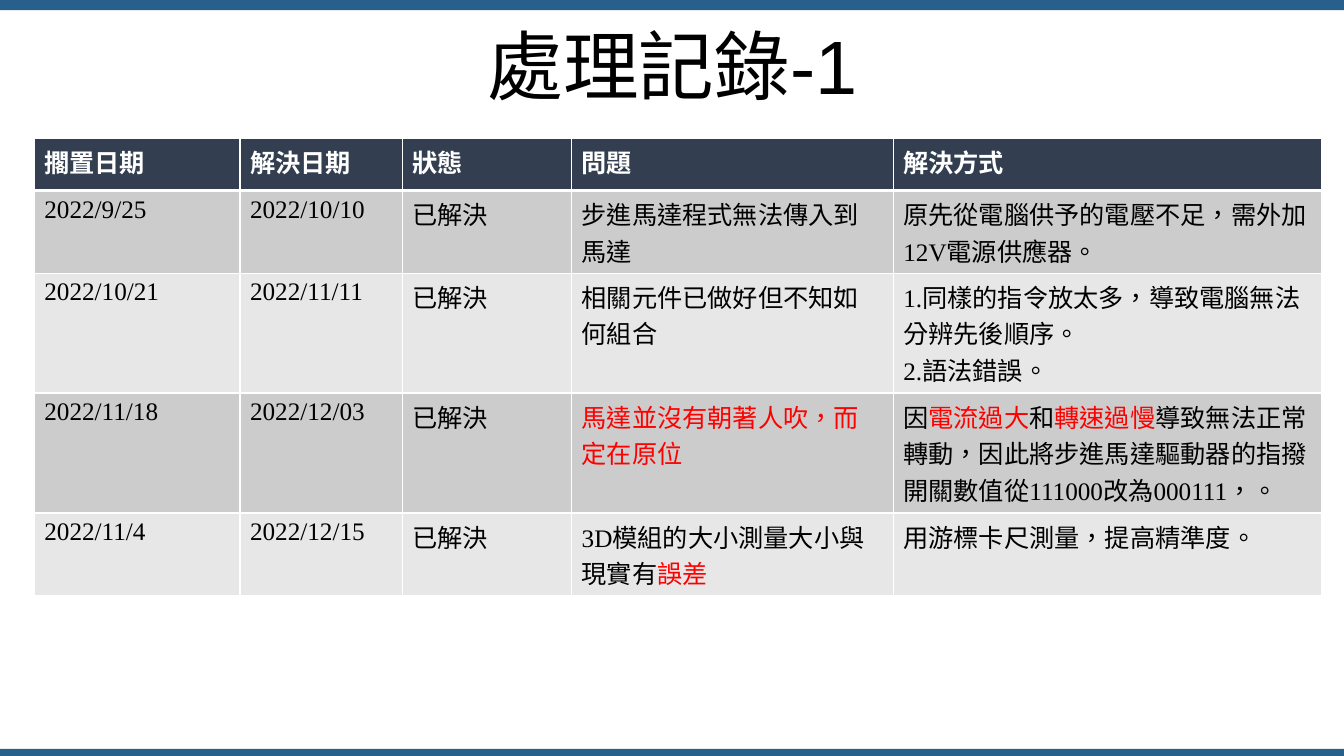
import dataclasses

import lxml.etree
import pptx
import pptx.dml.color
import pptx.enum.shapes
import pptx.enum.text
import pptx.oxml.ns
import pptx.util

Inches = pptx.util.Inches
Pt = pptx.util.Pt


@dataclasses.dataclass(frozen=True)
class Theme:
    """Colours, fonts and type sizes of the slide."""
    bar: str = "28608C"
    header: str = "333F50"
    bands: tuple = ("CCCCCC", "E7E7E7")
    white: str = "FFFFFF"
    black: str = "000000"
    red: str = "FF0000"
    title_font: str = "Arial"
    table_font: str = "Times New Roman"
    language: str = "zh-TW"
    title_size: int = 54
    table_size: int = 18
    thin: int = 1
    thick: int = 3


THEME = Theme()
TITLE = "處理記錄-1"
COLUMN_WIDTHS = [2.04, 1.61, 1.68, 3.19, 4.25]
ROW_HEIGHTS = [0.52, 0.82, 1.19, 1.19, 0.82]
RED_MARK = "|"
HEADERS = ["擱置日期", "解決日期", "狀態", "問題", "解決方式"]
RECORDS = [
    ["2022/9/25", "2022/10/10", "已解決", "步進馬達程式無法傳入到馬達",
     "原先從電腦供予的電壓不足，需外加12V電源供應器。"],
    ["2022/10/21", "2022/11/11", "已解決", "相關元件已做好但不知如何組合",
     "1.同樣的指令放太多，導致電腦無法分辨先後順序。\n2.語法錯誤。"],
    ["2022/11/18", "2022/12/03", "已解決", "|馬達並沒有朝著人吹，而定在原位|",
     "因|電流過大|和|轉速過慢|導致無法正常轉動，因此將步進馬達驅動器的指撥"
     "開關數值從111000改為000111，。"],
    ["2022/11/4", "2022/12/15", "已解決", "3D模組的大小測量大小與現實有|誤差|",
     "用游標卡尺測量，提高精準度。"],
]


def rgb(value):
    """Turn a hex string into a colour."""
    return pptx.dml.color.RGBColor.from_string(value)


def add_run(p, text, font, size, color, bold=False):
    """Append one formatted run to a paragraph."""
    r = p.add_run()
    r.text = text
    r.font.name = font
    r.font.size = Pt(size)
    r.font.bold = bold
    r.font.color.rgb = rgb(color)
    r._r.get_or_add_rPr().set("lang", THEME.language)


def add_bar(s, top, height):
    """Draw a full-width bar."""
    sp = s.shapes.add_shape(pptx.enum.shapes.MSO_SHAPE.RECTANGLE,
                            0, Inches(top), Inches(13.33), Inches(height))
    sp.shadow.inherit = False
    sp.fill.solid()
    sp.fill.fore_color.rgb = rgb(THEME.bar)
    sp.line.fill.background()


def add_title(s, text):
    """Add the centred title."""
    sp = s.shapes.add_textbox(Inches(0.34), Inches(0.3), Inches(12.66), Inches(0.79))
    tf = sp.text_frame
    tf.word_wrap = True
    tf.vertical_anchor = pptx.enum.text.MSO_ANCHOR.MIDDLE
    p = tf.paragraphs[0]
    p.alignment = pptx.enum.text.PP_ALIGN.CENTER
    p.line_spacing = 0.9
    p.space_before = Pt(10)
    add_run(p, text, THEME.title_font, THEME.title_size, THEME.black)


def set_borders(cell, top, bottom):
    """Give a cell white borders with the stated top and bottom widths."""
    qn = pptx.oxml.ns.qn
    tc_pr = cell._tc.get_or_add_tcPr()
    widths = {"a:lnL": THEME.thin, "a:lnR": THEME.thin, "a:lnT": top, "a:lnB": bottom}
    for i, (tag, width) in enumerate(widths.items()):
        ln = lxml.etree.Element(qn(tag), w=str(Pt(width)))
        fill = lxml.etree.SubElement(ln, qn("a:solidFill"))
        lxml.etree.SubElement(fill, qn("a:srgbClr"), val=THEME.white)
        tc_pr.insert(i, ln)


def fill_cell(cell, text, fill, color, bold):
    """Fill a cell and write its text, with marked parts in red."""
    cell.fill.solid()
    cell.fill.fore_color.rgb = rgb(fill)
    tf = cell.text_frame
    for i, line in enumerate(text.split("\n")):
        p = tf.add_paragraph() if i else tf.paragraphs[0]
        for j, part in enumerate(line.split(RED_MARK)):
            if part:
                add_run(p, part, THEME.table_font, THEME.table_size,
                        THEME.red if j % 2 else color, bold)


def add_record_table(s):
    """Add the table of records with its header and banded rows."""
    rows = [HEADERS] + RECORDS
    table = s.shapes.add_table(len(rows), len(HEADERS), Inches(0.34), Inches(1.37),
                               Inches(sum(COLUMN_WIDTHS)), Inches(sum(ROW_HEIGHTS))).table
    for column, width in zip(table.columns, COLUMN_WIDTHS):
        column.width = Inches(width)
    for i, (row, height, texts) in enumerate(zip(table.rows, ROW_HEIGHTS, rows)):
        row.height = Inches(height)
        is_header = i == 0
        fill = THEME.header if is_header else THEME.bands[(i - 1) % 2]
        color = THEME.white if is_header else THEME.black
        for cell, text in zip(row.cells, texts):
            fill_cell(cell, text, fill, color, is_header)
            set_borders(cell, THEME.thick if i == 1 else THEME.thin,
                        THEME.thick if is_header else THEME.thin)


def main():
    """Build the slide and save it."""
    prs = pptx.Presentation()
    prs.slide_width = Inches(13.33)
    prs.slide_height = Inches(7.5)
    s = prs.slides.add_slide(prs.slide_layouts[6])
    add_bar(s, 0, 0.1)
    add_bar(s, 7.43, 0.07)
    add_title(s, TITLE)
    add_record_table(s)
    prs.save("out.pptx")


if __name__ == "__main__":
    main()
